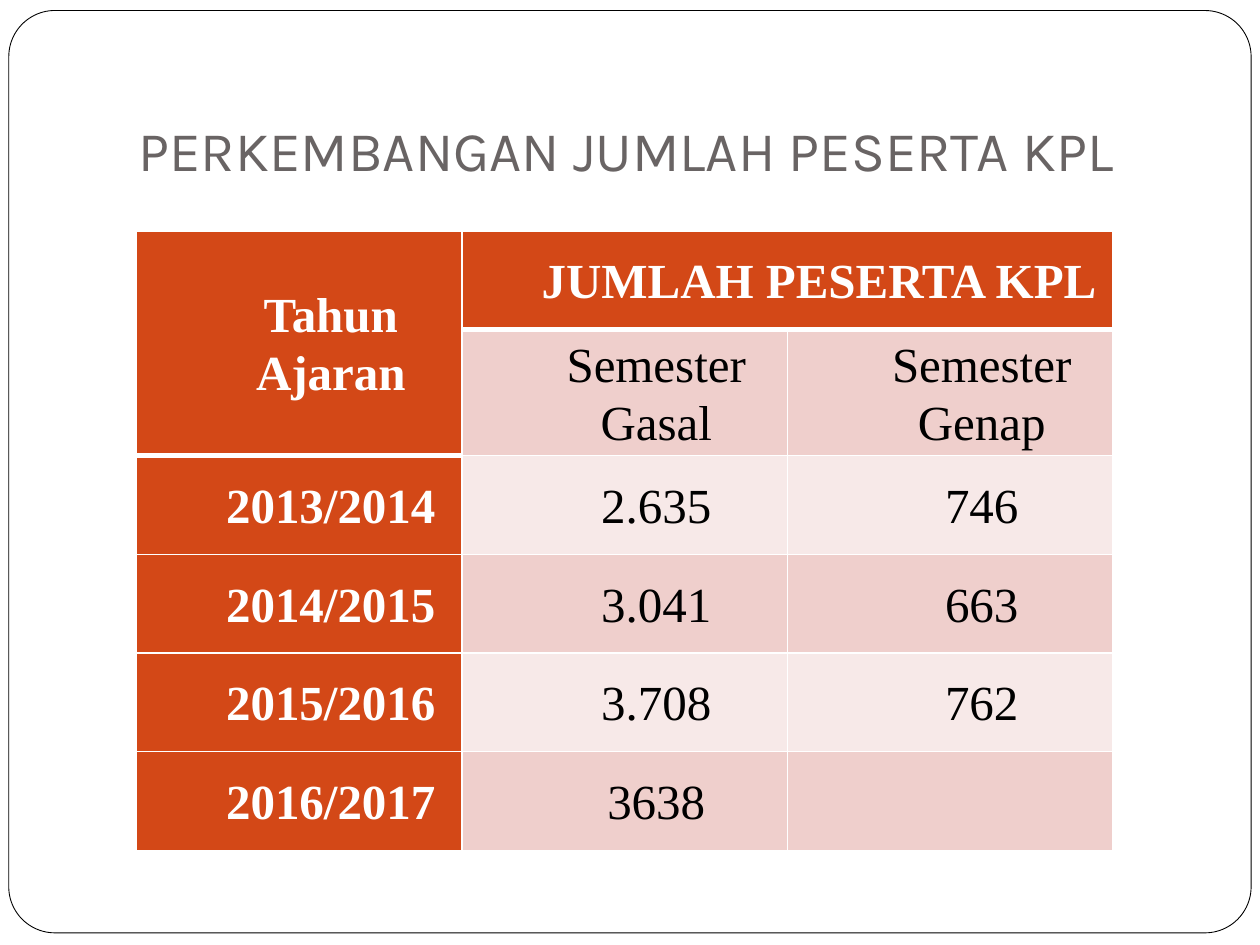
from dataclasses import dataclass

from lxml.etree import SubElement
from pptx import Presentation
from pptx.dml.color import RGBColor
from pptx.enum.shapes import MSO_SHAPE as Shape
from pptx.enum.text import MSO_ANCHOR as Anchor, PP_ALIGN as Align
from pptx.oxml.ns import qn
from pptx.util import Inches, Pt


@dataclass(frozen=True)
class Theme:
    paper: str = "FFFFFF"
    outline: str = "000000"
    title: str = "696464"
    accent: str = "D34817"
    bands: tuple = ("F7E9E8", "EFCFCC")
    body: str = "000000"
    title_font: str = "Karla"
    table_font: str = "Times New Roman"
    title_size: int = 32
    table_size: int = 28
    thin: int = 1
    heavy: int = 3


THEME = Theme()
SLIDE_WIDTH, SLIDE_HEIGHT = 10, 7.5
GRID_COLUMNS, GRID_ROWS = 120, 90
TABLE_COLUMN = 31
TABLE_ROWS = (9.4, 10, 9.4, 9.4, 9.4, 9.4)
CONTENT = (
    ("Tahun Ajaran", "JUMLAH PESERTA KPL", ""),
    ("", "Semester Gasal", "Semester Genap"),
    ("2013/2014", "2.635", "746"),
    ("2014/2015", "3.041", "663"),
    ("2015/2016", "3.708", "762"),
    ("2016/2017", "3638", ""),
)


def across(columns):
    return Inches(SLIDE_WIDTH * columns / GRID_COLUMNS)


def down(rows):
    return Inches(SLIDE_HEIGHT * rows / GRID_ROWS)


def area(left, top, width, height):
    return across(left), down(top), across(width), down(height)


def color(value):
    return RGBColor.from_string(value)


def add_run(paragraph, text, font, size, ink, bold=False):
    run = paragraph.add_run()
    run.text = text
    run.font.name = font
    run.font.size = Pt(size)
    run.font.bold = bold
    run.font.color.rgb = color(ink)


def add_frame(slide):
    shape = slide.shapes.add_shape(Shape.ROUNDED_RECTANGLE, *area(0.84, 1, 118.32, 87.84))
    shape.adjustments[0] = 0.05
    shape.shadow.inherit = False
    shape.fill.solid()
    shape.fill.fore_color.rgb = color(THEME.paper)
    shape.line.color.rgb = color(THEME.outline)
    shape.line.width = Pt(0.5)


def add_title(slide, text):
    frame = slide.shapes.add_textbox(*area(12, 9, 102, 9.6)).text_frame
    frame.word_wrap = True
    frame.vertical_anchor = Anchor.BOTTOM
    frame.margin_bottom = Inches(0.1)
    add_run(frame.paragraphs[0], text, THEME.title_font, THEME.title_size, THEME.title)


def is_header(row, column):
    return row == 0 or (row == 1 and column == 0)


def set_borders(cell, top, bottom):
    properties = cell._tc.get_or_add_tcPr()
    widths = {"lnL": THEME.thin, "lnR": THEME.thin, "lnT": top, "lnB": bottom}
    for side, width in widths.items():
        line = SubElement(properties, qn(f"a:{side}"), w=str(Pt(width)))
        fill = SubElement(line, qn("a:solidFill"))
        SubElement(fill, qn("a:srgbClr"), val=THEME.paper)


def style_cell(cell, row, column):
    top = THEME.heavy if row and is_header(row - 1, column) else THEME.thin
    bottom = THEME.heavy if is_header(row, column) else THEME.thin
    set_borders(cell, top, bottom)
    accented = row == 0 or column == 0
    cell.fill.solid()
    cell.fill.fore_color.rgb = color(THEME.accent if accented else THEME.bands[row % 2])
    cell.vertical_anchor = Anchor.MIDDLE
    cell.margin_left = cell.margin_right = Inches(0.07)
    cell.margin_top = cell.margin_bottom = 0
    return accented


def write_cell(cell, text, accented):
    paragraph = cell.text_frame.paragraphs[0]
    paragraph.alignment = Align.CENTER
    paragraph.line_spacing = 1.07
    paragraph.font.size = Pt(THEME.table_size)
    paragraph._p.get_or_add_pPr().set("marL", str(Inches(0.5)))
    if text:
        ink = THEME.paper if accented else THEME.body
        add_run(paragraph, text, THEME.table_font, THEME.table_size, ink, accented)


def add_participant_table(slide):
    row_count, column_count = len(CONTENT), len(CONTENT[0])
    bounds = area(13, 22, TABLE_COLUMN * column_count, sum(TABLE_ROWS))
    table = slide.shapes.add_table(row_count, column_count, *bounds).table
    for column in table.columns:
        column.width = across(TABLE_COLUMN)
    for row, height in zip(table.rows, TABLE_ROWS):
        row.height = down(height)
    table.cell(0, 0).merge(table.cell(1, 0))
    table.cell(0, 1).merge(table.cell(0, 2))
    for row, texts in enumerate(CONTENT):
        for column, text in enumerate(texts):
            cell = table.cell(row, column)
            accented = style_cell(cell, row, column)
            if not cell.is_spanned:
                write_cell(cell, text, accented)


def main():
    presentation = Presentation()
    presentation.slide_width = Inches(SLIDE_WIDTH)
    presentation.slide_height = Inches(SLIDE_HEIGHT)
    slide = presentation.slides.add_slide(presentation.slide_layouts[6])
    add_frame(slide)
    add_title(slide, "PERKEMBANGAN JUMLAH PESERTA KPL")
    add_participant_table(slide)
    presentation.save("out.pptx")


if __name__ == "__main__":
    main()
